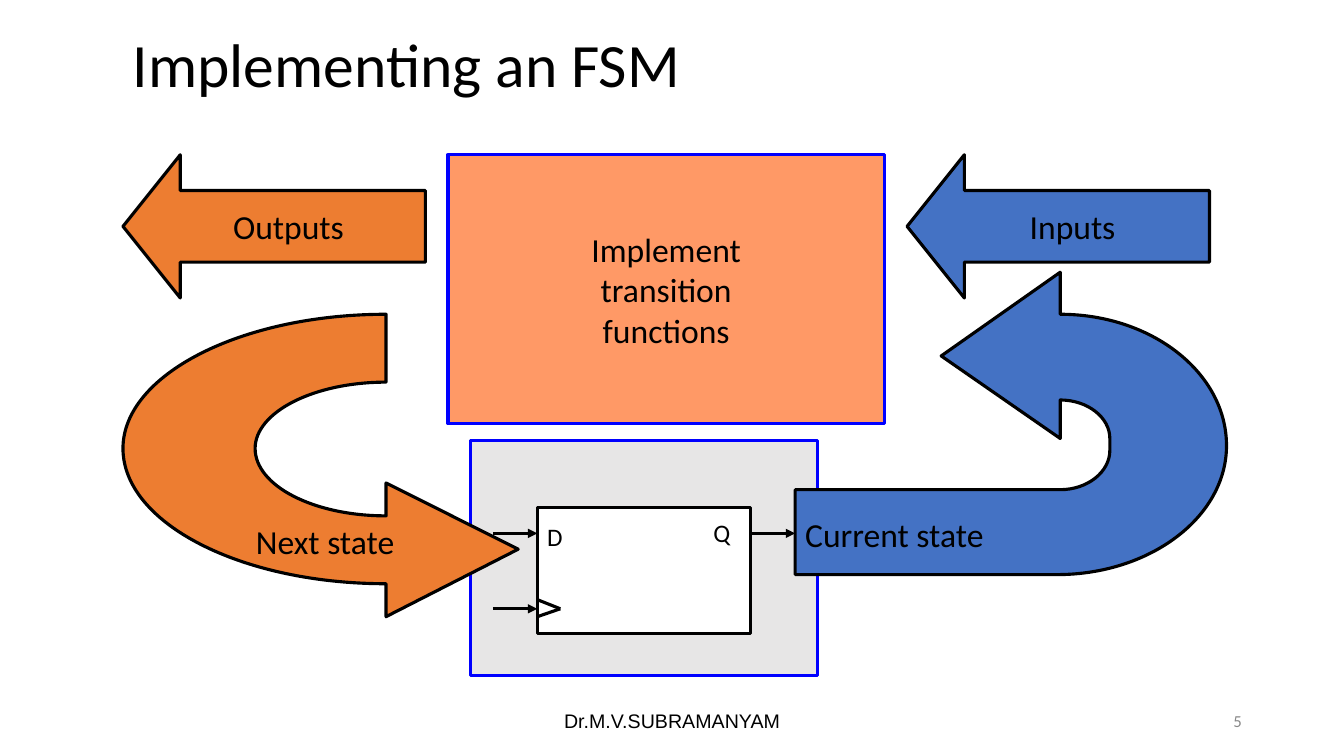
from lxml import etree
from pptx import Presentation
from pptx import util as u
from pptx.dml.color import RGBColor
from pptx.enum import shapes, text
from pptx.oxml.ns import qn

HUES = {
    "black": "000000", "white": "FFFFFF", "gray": "E7E6E6", "dim": "898989",
    "edge": "0000FF", "peach": "FF9966", "blue": "4472C4", "orange": "ED7D31",
}
ALIGN = {"l": text.PP_ALIGN.LEFT, "c": text.PP_ALIGN.CENTER, "r": text.PP_ALIGN.RIGHT}
KIND = shapes.MSO_SHAPE


def write(shape, words, size=24, font="Calibri", hue="black", align="c", space=None, top=0.13):
    frame = shape.text_frame
    frame.word_wrap = True
    frame.vertical_anchor = text.MSO_ANCHOR.MIDDLE
    frame.margin_top = u.Cm(top)
    frame.text = words
    for para in frame.paragraphs:
        para.alignment = ALIGN[align]
        para.line_spacing = space
        for run in para.runs:
            run.font.size = u.Pt(size)
            run.font.name = font
            run.font.color.rgb = RGBColor.from_string(HUES[hue])


def paint(shape, fill, line="black"):
    shape.shadow.inherit = False
    shape.fill.solid()
    shape.fill.fore_color.rgb = RGBColor.from_string(HUES[fill])
    shape.line.color.rgb = RGBColor.from_string(HUES[line])
    shape.line.width = u.Pt(2.25)


deck = Presentation()
deck.slide_width, deck.slide_height = u.Cm(33.87), u.Cm(19.05)
slide = deck.slides.add_slide(deck.slide_layouts[6])
items = slide.shapes

for box, fill, line in [
    ((11.86, 11.1, 8.74, 5.92), "gray", "edge"),
    ((13.54, 12.79, 5.37, 3.18), "white", "black"),
]:
    paint(items.add_shape(KIND.RECTANGLE, *map(u.Cm, box)), fill, line)

for x1, y1, x2, y2, head in [
    (13.54, 15.11, 14.12, 15.34, False),
    (14.12, 15.34, 13.54, 15.54, False),
    (12.42, 13.44, 13.54, 13.44, True),
    (12.42, 15.34, 13.54, 15.34, True),
    (18.91, 13.44, 20.04, 13.44, True),
]:
    wire = items.add_connector(shapes.MSO_CONNECTOR.STRAIGHT, *map(u.Cm, (x1, y1, x2, y2)))
    wire.line.color.rgb = RGBColor.from_string(HUES["black"])
    wire.line.width = u.Pt(2.25)
    props = wire.element.spPr
    if head:
        etree.SubElement(props.find(qn("a:ln")), qn("a:tailEnd"), type="triangle")
    etree.SubElement(props, qn("a:effectLst"))

state = [
    [(23.72, 8.97)], [(26.72, 6.86)], [(26.72, 7.92)],
    [(29.03, 7.92), (30.91, 9.4), (30.91, 11.23)],
    [(30.91, 13.03), (28.98, 14.48), (26.64, 14.48)],
    [(20.04, 14.48)], [(20.04, 12.34)], [(26.72, 12.34)],
    [(27.41, 12.34), (27.97, 11.89), (27.97, 11.35)],
    [(27.97, 11.05)],
    [(27.97, 10.52), (27.41, 10.08), (26.72, 10.08)],
    [(26.72, 11.05)],
]
after = [
    [(9.73, 13)],
    [(7.9, 13), (6.43, 12.24), (6.43, 11.3)],
    [(6.43, 10.39), (7.9, 9.63), (9.73, 9.63)],
    [(9.73, 7.92)],
    [(6.07, 7.92), (3.1, 9.45), (3.1, 11.3)],
    [(3.1, 13.18), (6.07, 14.71), (9.73, 14.71)],
    [(9.73, 15.54)], [(13.06, 13.84)], [(9.73, 12.17)],
]
loops = []
for route, fill in [(state, "blue"), (after, "orange")]:
    ends = [(u.Cm(x), u.Cm(y)) for part in route for x, y in part]
    pen = items.build_freeform(*ends[0])
    pen.add_line_segments(ends[1:], close=True)
    loop = pen.convert_to_shape()
    lines = iter(list(loop.element.iter(qn("a:lnTo"))))
    for part in route[1:]:
        first, *rest = [next(lines) for dot in part]
        if rest:
            first.tag = qn("a:cubicBezTo")
        for line in rest:
            first.append(line[0])
            line.getparent().remove(line)
    paint(loop, fill)
    loops.append(loop)
write(loops[0], "Current state", align="l", top=5.7)

logic = items.add_shape(KIND.RECTANGLE, *map(u.Cm, (11.29, 3.9, 11, 6.78)))
paint(logic, "peach", "edge")
write(logic, "Implement\ntransition\nfunctions")

for left, fill, words in [(22.86, "blue", "Inputs"), (3.1, "orange", "Outputs")]:
    arrow = items.add_shape(KIND.LEFT_ARROW, *map(u.Cm, (left, 3.9, 7.62, 3.61)))
    arrow.adjustments[1] = 0.4
    paint(arrow, fill)
    write(arrow, words)

for box, words, style in [
    ((3.1, 0.1, 28.22, 3.18), "Implementing an FSM", {"size": 44, "align": "l", "space": 0.9}),
    ((13.54, 13, 0.95, 1.02), "D", {"size": 18, "align": "l"}),
    ((17.73, 12.9, 0.98, 1.02), "Q", {"size": 18, "align": "l"}),
    ((6.2, 13, 4.1, 1.27), "Next state", {"align": "l"}),
    ((11.58, 17.65, 10.72, 1.02), "Dr.M.V.SUBRAMANYAM", {"size": 14, "font": "Arial"}),
    ((23.93, 17.65, 7.62, 1.02), "5", {"size": 12, "hue": "dim", "align": "r"}),
]:
    write(items.add_textbox(*map(u.Cm, box)), words, **style)

deck.save("out.pptx")
